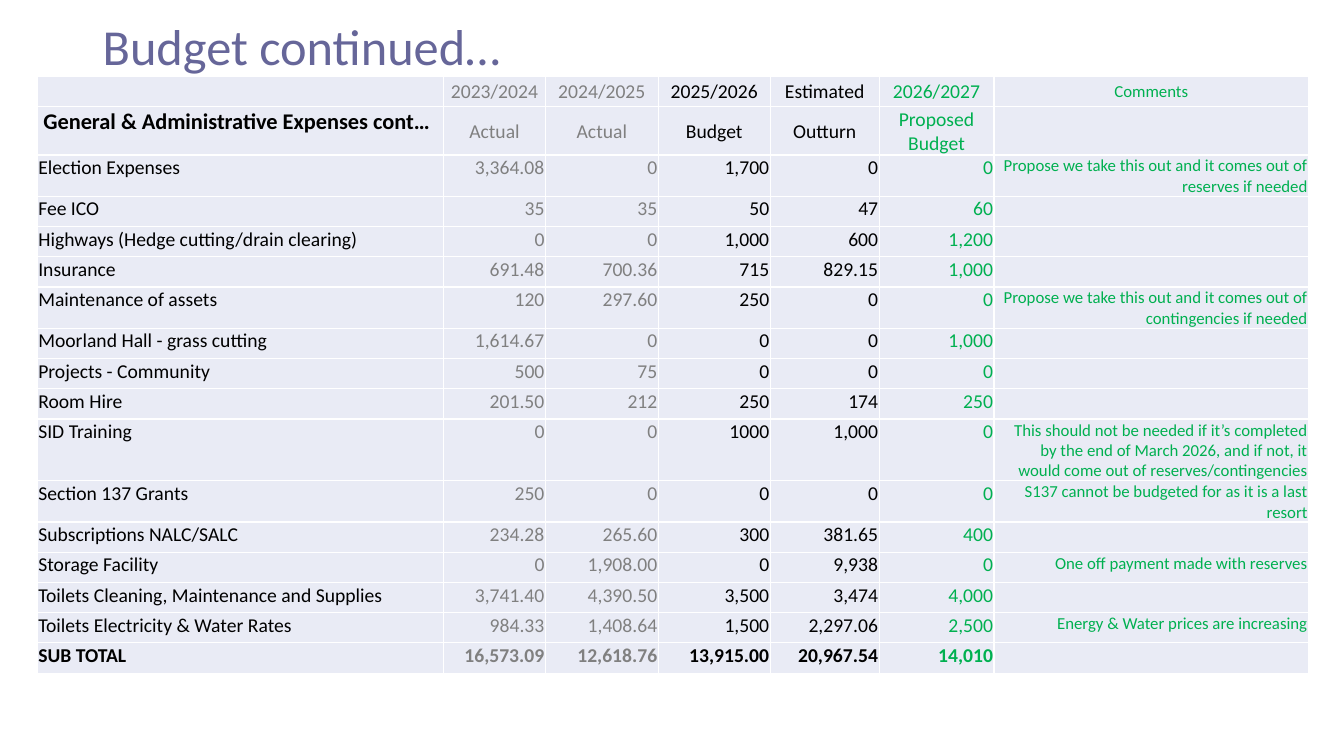
import dataclasses
import pptx
import pptx.dml.color
import pptx.enum.text
import pptx.oxml.ns
import pptx.util
from lxml import etree

Inches = pptx.util.Inches
Pt = pptx.util.Pt
Align = pptx.enum.text.PP_ALIGN
Anchor = pptx.enum.text.MSO_ANCHOR

FONT = "Calibri"
BLACK, GREY, GREEN = "000000", "808080", "00B050"
WHITE, PALE, VIOLET = "FFFFFF", "E9EBF5", "666699"


@dataclasses.dataclass
class Column:
    width: float
    color: str
    size: int = 14
    align: Align = Align.RIGHT


COLUMNS = [
    Column(4.03, BLACK, align=Align.LEFT),
    Column(1.01, GREY),
    Column(1.12, GREY),
    Column(1.11, BLACK),
    Column(1.08, BLACK),
    Column(1.14, GREEN),
    Column(3.12, GREEN, size=12),
]

# Budget rows: two heading rows, the items and the total
ROWS = [
    ("", "2023/2024", "2024/2025", "2025/2026", "Estimated", "2026/2027", "Comments"),
    ("General & Administrative Expenses cont…", "Actual", "Actual", "Budget", "Outturn",
     "Proposed Budget", ""),
    ("Election Expenses", "3,364.08", "0", "1,700", "0", "0",
     "Propose we take this out and it comes out of reserves if needed"),
    ("Fee ICO", "35", "35", "50", "47", "60", ""),
    ("Highways (Hedge cutting/drain clearing)", "0", "0", "1,000", "600", "1,200", ""),
    ("Insurance", "691.48", "700.36", "715", "829.15", "1,000", ""),
    ("Maintenance of assets", "120", "297.60", "250", "0", "0",
     "Propose we take this out and it comes out of contingencies if needed"),
    ("Moorland Hall - grass cutting", "1,614.67", "0", "0", "0", "1,000", ""),
    ("Projects - Community", "500", "75", "0", "0", "0", ""),
    ("Room Hire", "201.50", "212", "250", "174", "250", ""),
    ("SID Training", "0", "0", "1000", "1,000", "0",
     "This should not be needed if it’s completed by the end of March 2026, "
     "and if not, it would come out of reserves/contingencies"),
    ("Section 137 Grants", "250", "0", "0", "0", "0",
     "S137 cannot be budgeted for as it is a last resort"),
    ("Subscriptions NALC/SALC", "234.28", "265.60", "300", "381.65", "400", ""),
    ("Storage Facility", "0", "1,908.00", "0", "9,938", "0",
     "One off payment made with reserves"),
    ("Toilets Cleaning, Maintenance and Supplies", "3,741.40", "4,390.50", "3,500",
     "3,474", "4,000", ""),
    ("Toilets Electricity & Water Rates", "984.33", "1,408.64", "1,500", "2,297.06",
     "2,500", "Energy & Water prices are increasing"),
    ("SUB TOTAL", "16,573.09", "12,618.76", "13,915.00", "20,967.54", "14,010", ""),
]
HEADS = 2
ROW_HEIGHT = 0.3


def rgb(color: str) -> pptx.dml.color.RGBColor:
    return pptx.dml.color.RGBColor.from_string(color)


def style(para, size: float, color: str, bold: bool = False) -> None:
    font = para.font
    font.name, font.size, font.bold = FONT, Pt(size), bold
    font.color.rgb = rgb(color)


def border(cell, color: str, width: float) -> None:
    props = cell._tc.get_or_add_tcPr()
    qn = pptx.oxml.ns.qn
    for side in ("a:lnL", "a:lnR", "a:lnT", "a:lnB"):
        line = etree.SubElement(props, qn(side), w=str(Pt(width)))
        fill = etree.SubElement(line, qn("a:solidFill"))
        etree.SubElement(fill, qn("a:srgbClr"), val=color)


def add_title(slide, text: str) -> None:
    box = slide.shapes.add_textbox(Inches(0.92), Inches(0), Inches(11.5), Inches(0.97))
    frame = box.text_frame
    frame.word_wrap = True
    frame.vertical_anchor = Anchor.MIDDLE
    para = frame.paragraphs[0]
    para.text = text
    para.line_spacing = 0.9
    style(para, 36, VIOLET)


def fill_cell(cell, text: str, row: int, col: int) -> None:
    column = COLUMNS[col]
    head = row < HEADS
    group = head and col == 0
    border(cell, WHITE, 1)
    cell.fill.solid()
    cell.fill.fore_color.rgb = rgb(PALE)
    cell.margin_left = Inches(0.06 if group else 0.01)
    cell.margin_right = cell.margin_top = Inches(0.01)
    cell.margin_bottom = Inches(0)
    cell.vertical_anchor = Anchor.MIDDLE if head and not group else Anchor.TOP
    para = cell.text_frame.paragraphs[0]
    para.text = text
    para.alignment = Align.CENTER if head and not group else column.align
    style(para, 16 if group and text else column.size, column.color,
          bold=group or row == len(ROWS) - 1)


def add_budget(slide) -> None:
    width = sum(column.width for column in COLUMNS)
    frame = slide.shapes.add_table(
        len(ROWS), len(COLUMNS), Inches(0.37), Inches(0.76),
        Inches(width), Inches(ROW_HEIGHT * len(ROWS)))
    table = frame.table
    table.first_row = table.horz_banding = False
    for col, column in enumerate(COLUMNS):
        table.columns[col].width = Inches(column.width)
    for row, texts in enumerate(ROWS):
        table.rows[row].height = Inches(ROW_HEIGHT)
        for col, text in enumerate(texts):
            fill_cell(table.cell(row, col), text, row, col)


def main() -> None:
    deck = pptx.Presentation()
    deck.slide_width, deck.slide_height = Inches(13.33), Inches(7.5)
    slide = deck.slides.add_slide(deck.slide_layouts[6])
    add_title(slide, "Budget continued…")
    add_budget(slide)
    deck.save("out.pptx")


if __name__ == "__main__":
    main()
